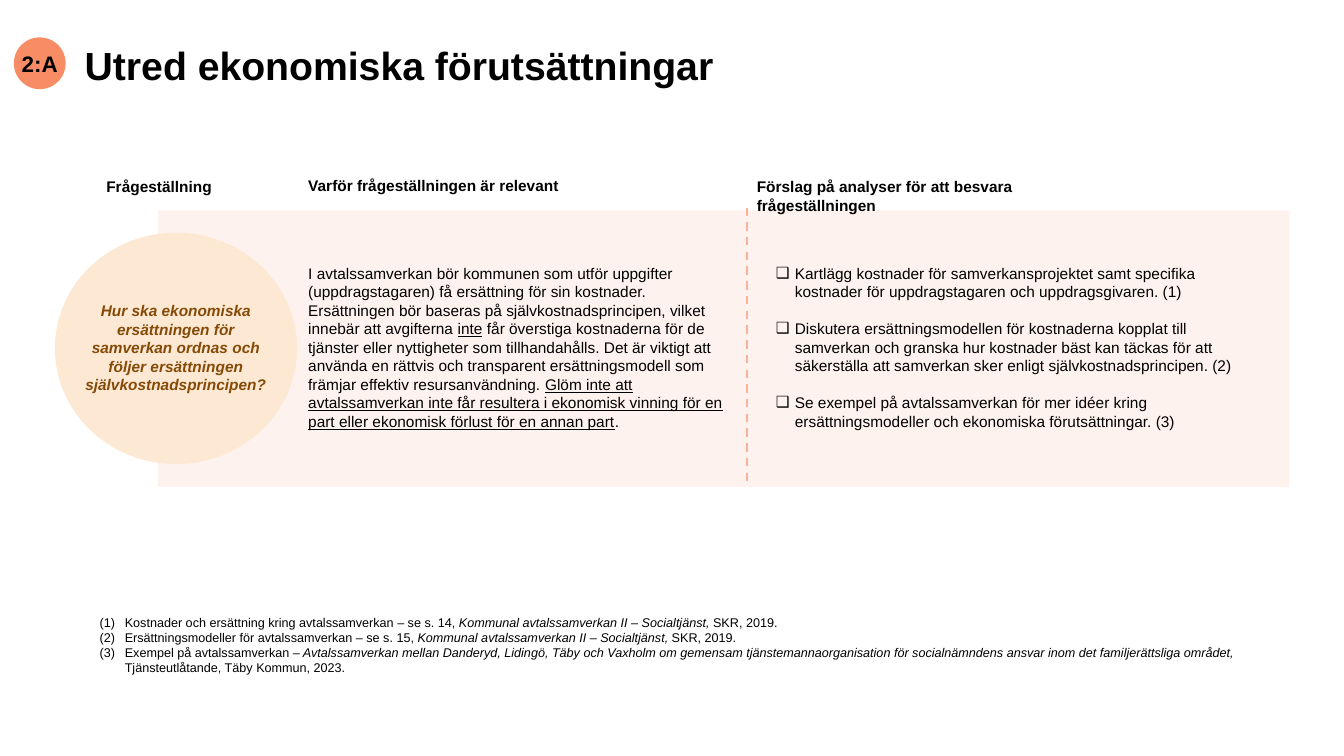
"""Build the slide on economic conditions for contractual cooperation."""
from dataclasses import dataclass

from lxml import etree
from pptx import Presentation
from pptx.dml.color import RGBColor
from pptx.enum.dml import MSO_LINE
from pptx.enum.shapes import MSO_CONNECTOR, MSO_SHAPE
from pptx.enum.text import MSO_ANCHOR, MSO_AUTO_SIZE, PP_ALIGN
from pptx.oxml.ns import qn
from pptx.util import Pt

LEFT, CENTER = PP_ALIGN.LEFT, PP_ALIGN.CENTER
MIDDLE = MSO_ANCHOR.MIDDLE
GROW = MSO_AUTO_SIZE.SHAPE_TO_FIT_TEXT
RECTANGLE, OVAL = MSO_SHAPE.RECTANGLE, MSO_SHAPE.OVAL
STRAIGHT, DASH = MSO_CONNECTOR.STRAIGHT, MSO_LINE.DASH
FONT = "Arial"
COLORS = {
    "text": "000000",
    "question": "854A07",
    "panel": "FDD9CB",
    "circle": "FDE9D3",
    "badge": "F88C64",
    "divider": "FAB398",
}
CHECKBOX = ("buChar", {"char": "❑"})
NUMBER = ("buAutoNum", {"type": "arabicParenBoth"})


@dataclass(frozen=True)
class TextRun:
    """A piece of text with its emphasis."""

    text: str
    bold: bool = False
    italic: bool = False
    underline: bool = False


@dataclass(frozen=True)
class TextBlock:
    """A text box with its paragraphs and list style."""

    box: tuple[float, float, float, float]
    paragraphs: list[list[TextRun]]
    size: float = 11
    color: str = "text"
    alignment: PP_ALIGN = LEFT
    bullet: tuple[str, dict[str, str]] | None = None
    indent: float = 0
    gap: float = 0


@dataclass(frozen=True)
class Figure:
    """A filled shape without outline."""

    preset: MSO_SHAPE
    box: tuple[float, float, float, float]
    color: str
    opacity: int = 100


def heading(left: float, top: float, width: float, text: str) -> TextBlock:
    """Describe a bold column heading."""
    return TextBlock((left, top, width, 20.9), [[TextRun(text, bold=True)]])


REPORT = TextRun("Kommunal avtalssamverkan II – Socialtjänst, ", italic=True)
PUBLISHER = TextRun("SKR, 2019.")
PANEL = Figure(RECTANGLE, (113, 150.2, 808, 197.6), "panel", 32)
CIRCLE = Figure(OVAL, (39.2, 166.2, 173, 165.3), "circle")
BADGE = Figure(OVAL, (9.9, 26.7, 37, 37), "badge")
TITLE = [TextRun("Utred ekonomiska förutsättningar", bold=True)]
BLOCKS = [
    heading(68.9, 123, 100.8, "Frågeställning"),
    heading(213.1, 122, 199.4, "Varför frågeställningen är relevant"),
    heading(533.5, 123, 284.4, "Förslag på analyser för att besvara frågeställningen"),
    TextBlock(
        (46.8, 211.7, 157.7, 74.2),
        [[TextRun(
            "Hur ska ekonomiska ersättningen för samverkan ordnas och följer "
            "ersättningen självkostnadsprincipen?", bold=True, italic=True)]],
        color="question", alignment=CENTER,
    ),
    TextBlock(
        (213.1, 185, 311.8, 127.4),
        [[
            TextRun(
                "I avtalssamverkan bör kommunen som utför uppgifter (uppdragstagaren) "
                "få ersättning för sin kostnader. Ersättningen bör baseras på "
                "självkostnadsprincipen, vilket innebär att avgifterna "),
            TextRun("inte", underline=True),
            TextRun(
                " får överstiga kostnaderna för de tjänster eller nyttigheter som "
                "tillhandahålls. Det är viktigt att använda en rättvis och transparent "
                "ersättningsmodell som främjar effektiv resursanvändning. "),
            TextRun(
                "Glöm inte att avtalssamverkan inte får resultera i ekonomisk vinning "
                "för en part eller ekonomisk förlust för en annan part", underline=True),
            TextRun("."),
        ]],
    ),
    TextBlock(
        (547.2, 185, 360, 127.4),
        [
            [TextRun(
                "Kartlägg kostnader för samverkansprojektet samt specifika kostnader "
                "för uppdragstagaren och uppdragsgivaren. (1)")],
            [TextRun(
                "Diskutera ersättningsmodellen för kostnaderna kopplat till samverkan "
                "och granska hur kostnader bäst kan täckas för att säkerställa att "
                "samverkan sker enligt självkostnadsprincipen. (2)")],
            [TextRun(
                "Se exempel på avtalssamverkan för mer idéer kring ersättningsmodeller "
                "och ekonomiska förutsättningar. (3)")],
        ],
        bullet=CHECKBOX, indent=13.5, gap=13.2,
    ),
    TextBlock(
        (64.1, 435.6, 869, 61.9),
        [
            [TextRun("Kostnader och ersättning kring avtalssamverkan – se s. 14, "),
             REPORT, PUBLISHER],
            [TextRun("Ersättningsmodeller för avtalssamverkan – se s. 15, "),
             REPORT, PUBLISHER],
            [TextRun("Exempel på avtalssamverkan "),
             TextRun(
                 "– Avtalssamverkan mellan Danderyd, Lidingö, Täby och Vaxholm om "
                 "gemensam tjänstemannaorganisation för socialnämndens ansvar inom det "
                 "familjerättsliga området, ", italic=True),
             TextRun("Tjänsteutlåtande, Täby Kommun, 2023.")],
        ],
        size=9, bullet=NUMBER, indent=18,
    ),
]


def color_of(name: str) -> RGBColor:
    """Return a palette colour."""
    return RGBColor.from_string(COLORS[name])


def add_runs(paragraph, runs: list[TextRun], size: float, color: str = "text") -> None:
    """Append formatted runs to a paragraph."""
    for item in runs:
        run = paragraph.add_run()
        run.text = item.text
        font = run.font
        font.name, font.size = FONT, Pt(size)
        font.bold, font.italic, font.underline = item.bold, item.italic, item.underline
        font.color.rgb = color_of(color)


def add_figure(slide, figure: Figure):
    """Draw a filled shape and return it."""
    shape = slide.shapes.add_shape(figure.preset, *map(Pt, figure.box))
    shape.shadow.inherit = False
    shape.fill.solid()
    shape.fill.fore_color.rgb = color_of(figure.color)
    shape.line.fill.background()
    if figure.opacity < 100:
        color = shape._element.spPr.find(".//" + qn("a:srgbClr"))
        etree.SubElement(color, qn("a:alpha"), val=str(figure.opacity * 1000))
    return shape


def add_block(slide, block: TextBlock) -> None:
    """Draw a text box with its paragraphs."""
    frame = slide.shapes.add_textbox(*map(Pt, block.box)).text_frame
    frame.word_wrap = True
    frame.auto_size = GROW
    for index, runs in enumerate(block.paragraphs):
        paragraph = frame.add_paragraph() if index else frame.paragraphs[0]
        if block.bullet:
            tag, attributes = block.bullet
            properties = paragraph._p.get_or_add_pPr()
            properties.set("marL", str(Pt(block.indent)))
            properties.set("indent", str(-Pt(block.indent)))
            etree.SubElement(properties, qn("a:buFont"), typeface=FONT)
            etree.SubElement(properties, qn("a:" + tag), attributes)
        paragraph.alignment = block.alignment
        if index and block.gap:
            paragraph.space_before = Pt(block.gap)
        add_runs(paragraph, runs, block.size, block.color)


def add_title(slide) -> None:
    """Place and format the slide title."""
    title = slide.shapes.title
    title.left, title.top, title.width, title.height = map(Pt, (53.3, 28.8, 756.7, 38.2))
    title.text_frame.vertical_anchor = MIDDLE
    paragraph = title.text_frame.paragraphs[0]
    paragraph.alignment, paragraph.line_spacing = LEFT, 0.95
    add_runs(paragraph, TITLE, 28)


def add_badge(slide) -> None:
    """Draw the round step label."""
    frame = add_figure(slide, BADGE).text_frame
    frame.margin_left = frame.margin_right = frame.margin_top = frame.margin_bottom = 0
    frame.vertical_anchor, frame.word_wrap = MIDDLE, False
    frame.paragraphs[0].alignment = CENTER
    add_runs(frame.paragraphs[0], [TextRun("2:A", bold=True)], 16)


def add_divider(slide) -> None:
    """Draw the dashed line between the columns."""
    divider = slide.shapes.add_connector(STRAIGHT, *map(Pt, (533.5, 148.3, 533.5, 347.8)))
    divider.line.color.rgb = color_of("divider")
    divider.line.width, divider.line.dash_style = Pt(1.5), DASH
    etree.SubElement(divider._element.spPr, qn("a:effectLst"))


def main() -> None:
    """Build and save the presentation."""
    presentation = Presentation()
    presentation.slide_width, presentation.slide_height = Pt(960), Pt(540)
    slide = presentation.slides.add_slide(presentation.slide_layouts[5])
    for figure in (PANEL, CIRCLE):
        add_figure(slide, figure)
    add_title(slide)
    for block in BLOCKS:
        add_block(slide, block)
    add_badge(slide)
    add_divider(slide)
    presentation.save("out.pptx")


if __name__ == "__main__":
    main()
